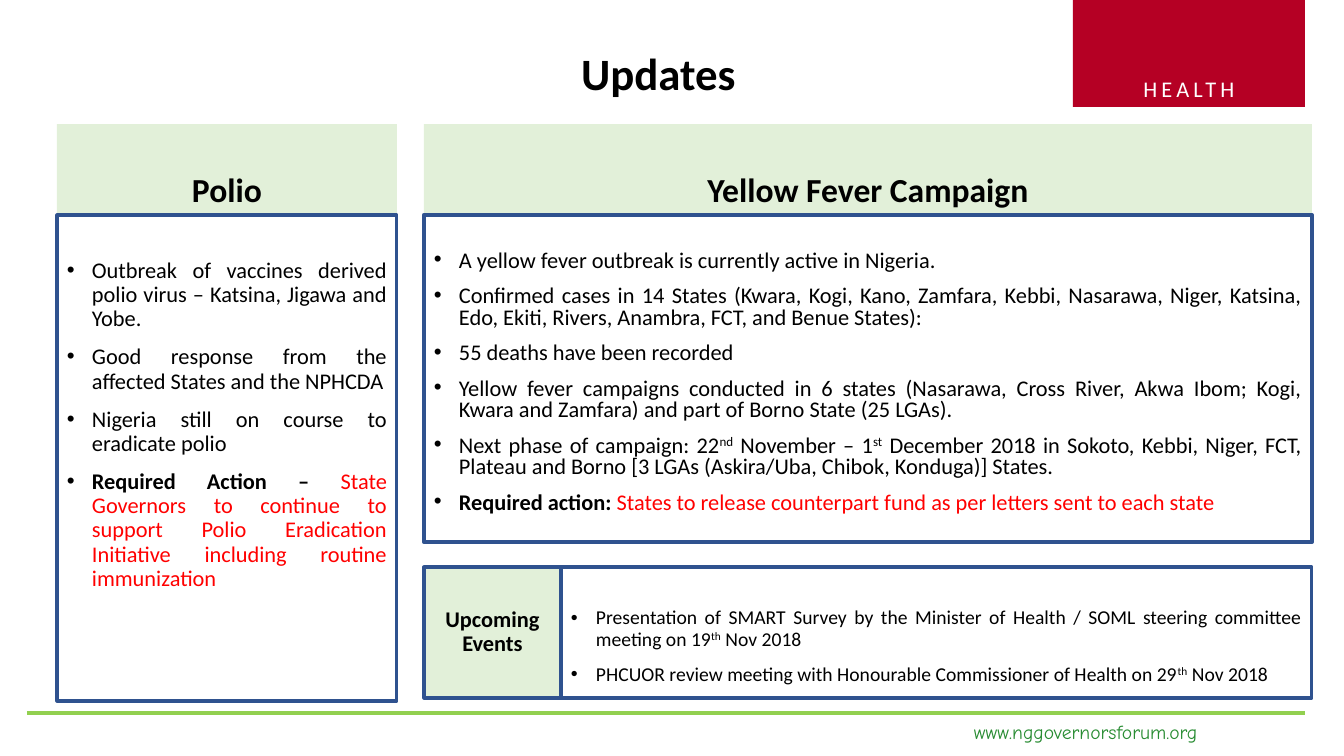
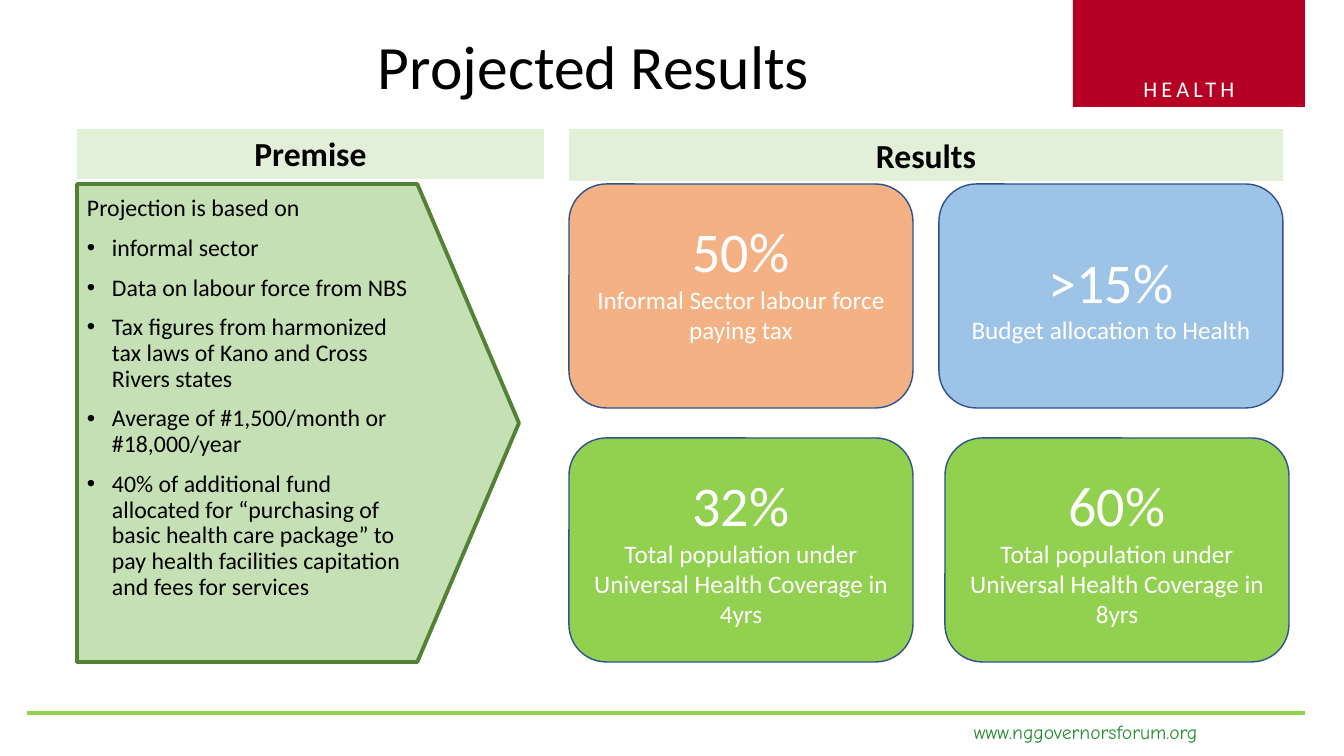
from dataclasses import dataclass
from typing import Optional

from lxml.etree import SubElement
from pptx import Presentation
from pptx.dml.color import RGBColor
from pptx.enum.shapes import MSO_CONNECTOR, MSO_SHAPE as Shape
from pptx.enum.text import MSO_ANCHOR as Anchor, MSO_AUTO_SIZE, PP_ALIGN as Align
from pptx.oxml.ns import qn
from pptx.util import Pt

PX = 914400 / 100.8
COMPARISON_LAYOUT = 4
FONT = "Calibri"
FOOTER_FONT = "Comic Neue"

BLACK = RGBColor(0x00, 0x00, 0x00)
WHITE = RGBColor(0xFF, 0xFF, 0xFF)
RED = RGBColor(0xFF, 0x00, 0x00)
CRIMSON = RGBColor(0xB5, 0x00, 0x24)
LIME = RGBColor(0x92, 0xD0, 0x50)
FOOTER_GREEN = RGBColor(0x28, 0x8C, 0x32)
PALE_GREEN = RGBColor(0xE2, 0xF0, 0xD9)
SOFT_GREEN = RGBColor(0xC5, 0xE0, 0xB4)
DARK_GREEN = RGBColor(0x54, 0x82, 0x35)
NAVY = RGBColor(0x2F, 0x52, 0x8F)
ORANGE = RGBColor(0xF4, 0xB1, 0x83)
SKY = RGBColor(0x9D, 0xC3, 0xE6)


@dataclass
class Piece:
    text: str
    bold: Optional[bool] = None
    color: Optional[RGBColor] = None
    raised: bool = False


def raised(text):
    return Piece(text, raised=True)


def action(label, request):
    return [Piece(label, bold=True), Piece(request, color=RED)]


POLIO = [
    "Outbreak of vaccines derived polio virus – Katsina, Jigawa and Yobe.",
    "Good response from the affected States and the NPHCDA",
    "Nigeria still on course to eradicate polio",
    action("Required Action – ", "State Governors to continue to support Polio "
           "Eradication Initiative including routine immunization"),
]
YELLOW_FEVER = [
    "A yellow fever outbreak is currently active in Nigeria.",
    "Confirmed cases in 14 States (Kwara, Kogi, Kano, Zamfara, Kebbi, Nasarawa, "
    "Niger, Katsina, Edo, Ekiti, Rivers, Anambra, FCT, and Benue States):",
    "55 deaths have been recorded",
    "Yellow fever campaigns conducted in 6 states (Nasarawa, Cross River, Akwa Ibom; "
    "Kogi, Kwara and Zamfara) and part of Borno State (25 LGAs).",
    [Piece("Next phase of campaign: 22"), raised("nd"), Piece(" November – 1"), raised("st"),
     Piece(" December 2018 in Sokoto, Kebbi, Niger, FCT, Plateau and Borno "
           "[3 LGAs (Askira/Uba, Chibok, Konduga)] States.")],
    action("Required action: ",
           "States to release counterpart fund as per letters sent to each state"),
]
EVENTS = [
    [Piece("Presentation of SMART Survey by the Minister of Health / SOML steering "
           "committee meeting on 19"), raised("th"), Piece(" Nov 2018")],
    [Piece("PHCUOR review meeting with Honourable Commissioner of Health on 29"),
     raised("th"), Piece(" Nov 2018")],
]
PREMISE = [
    "informal sector",
    "Data on labour force from NBS",
    "Tax figures from harmonized tax laws of Kano and Cross Rivers states",
    "Average of #1,500/month or #18,000/year",
    "40% of additional fund allocated for “purchasing of basic health care package” "
    "to pay health facilities capitation and fees for services",
]
COVERAGE = "Total population under Universal Health Coverage in "
RESULT_CARDS = [
    (569, 184, ORANGE, "50%", "Informal Sector labour force paying tax", 36),
    (939, 184, SKY, ">15%", "Budget allocation to Health", 5),
    (569, 438, LIME, "32%", COVERAGE + "4yrs", 5),
    (945, 438, LIME, "60%", COVERAGE + "8yrs", 5),
]


def px(length):
    return round(length * PX)


def place(shape, left, top, width, height):
    shape.left, shape.top = px(left), px(top)
    shape.width, shape.height = px(width), px(height)


def paint(shape, fill=None, line=None, weight=1):
    if fill is None:
        shape.fill.background()
    else:
        shape.fill.solid()
        shape.fill.fore_color.rgb = fill
    if line is None:
        shape.line.fill.background()
    else:
        shape.line.color.rgb = line
        shape.line.width = Pt(weight)


def draw(page, kind, bounds, fill=None, line=None, weight=1):
    shape = page.shapes.add_shape(kind, *map(px, bounds))
    shape.shadow.inherit = False
    paint(shape, fill, line, weight)
    return shape


def prepare(shape, anchor, top=5, bottom=5):
    frame = shape.text_frame
    frame.word_wrap = True
    frame.auto_size = MSO_AUTO_SIZE.NONE
    frame.vertical_anchor = anchor
    frame.margin_left = frame.margin_right = px(10)
    frame.margin_top, frame.margin_bottom = px(top), px(bottom)
    return frame


def add_para(frame, content, size, align=Align.LEFT, color=BLACK, bold=False,
             font=FONT, leading=1.0, before=0, bullet=False):
    first = not frame.paragraphs[0].runs
    para = frame.paragraphs[0] if first else frame.add_paragraph()
    para.alignment = align
    para.line_spacing = leading
    para.space_before = Pt(0 if first else before)
    props = para._p.get_or_add_pPr()
    props.set("marL", str(px(25) if bullet else 0))
    props.set("indent", str(px(-25) if bullet else 0))
    if bullet:
        SubElement(props, qn("a:buFont")).set("typeface", "Arial")
        SubElement(props, qn("a:buChar")).set("char", "•")
    else:
        SubElement(props, qn("a:buNone"))
    para.font.name, para.font.size, para.font.bold = font, Pt(size), bold
    para.font.color.rgb = color
    for piece in [Piece(content)] if isinstance(content, str) else content:
        span = para.add_run()
        span.text = piece.text
        if piece.bold is not None:
            span.font.bold = piece.bold
        if piece.color is not None:
            span.font.color.rgb = piece.color
        if piece.raised:
            span._r.get_or_add_rPr().set("baseline", "30000")
    return para


def add_bullets(frame, items, size, leading=0.9, align=Align.JUSTIFY):
    for item in items:
        add_para(frame, item, size, align, leading=leading, before=10, bullet=True)


def set_title(page, text, bounds, size, align, bold=False):
    title = page.shapes.title
    place(title, *bounds)
    add_para(prepare(title, Anchor.MIDDLE), text, size, align, bold=bold, leading=0.9)


def set_heading(page, index, text, bounds):
    heading = page.placeholders[index]
    place(heading, *bounds)
    paint(heading, PALE_GREEN)
    add_para(prepare(heading, Anchor.BOTTOM), text, 24, Align.CENTER, bold=True, leading=0.9)


def set_list(page, index, bounds, items, leading, weight, top):
    box = page.placeholders[index]
    place(box, *bounds)
    paint(box, line=NAVY, weight=weight)
    add_bullets(prepare(box, Anchor.TOP, top), items, 16, leading)


def add_card(page, left, top, fill, figure, label, bottom):
    card = draw(page, Shape.ROUNDED_RECTANGLE, (left, top, 344, 224), fill, NAVY)
    frame = prepare(card, Anchor.MIDDLE, bottom=bottom)
    add_para(frame, figure, 40, Align.CENTER, WHITE)
    add_para(frame, label, 18, Align.CENTER, WHITE)


def furnish_master(deck, page):
    band = draw(page, Shape.RECTANGLE, (1073, -1, 232, 108), CRIMSON)
    para = add_para(prepare(band, Anchor.BOTTOM), "HEALTH", 16, Align.CENTER, WHITE)
    para.runs[0]._r.get_or_add_rPr().set("spc", "300")

    rule = page.shapes.add_connector(MSO_CONNECTOR.STRAIGHT, *map(px, (27, 713, 1305, 713)))
    rule.line.color.rgb = LIME
    rule.line.width = Pt(2.25)
    SubElement(rule.element.spPr, qn("a:effectLst"))

    footer = page.shapes.add_textbox(*map(px, (964, 715, 288, 34)))
    add_para(prepare(footer, Anchor.TOP), "www.nggovernorsforum.org", 14,
             color=FOOTER_GREEN, font=FOOTER_FONT)

    for shape in (band, rule, footer):
        deck.slide_master.shapes.element.append(shape.element)


def build_updates(page):
    set_title(page, "Updates", (352, 40, 613, 73), 32, Align.CENTER, bold=True)
    set_heading(page, 1, "Polio", (57, 124, 340, 91))
    set_list(page, 2, (57, 215, 340, 486), POLIO, 0.9, 2.25, 44)
    set_heading(page, 3, "Yellow Fever Campaign", (424, 124, 888, 91))
    set_list(page, 4, (424, 215, 888, 327), YELLOW_FEVER, 0.8, 3, 36)

    events = draw(page, Shape.RECTANGLE, (561, 567, 751, 131), None, NAVY, 2.25)
    add_bullets(prepare(events, Anchor.TOP, 41), EVENTS, 14)
    label = draw(page, Shape.RECTANGLE, (424, 567, 137, 131), PALE_GREEN, NAVY, 2.25)
    add_para(prepare(label, Anchor.MIDDLE), "Upcoming Events", 16, Align.CENTER,
             bold=True, leading=0.9)


def build_results(page):
    set_title(page, "Projected Results", (368, 23, 586, 94), 44, Align.LEFT)
    set_heading(page, 1, "Premise", (77, 129, 467, 50))
    set_heading(page, 3, "Results", (569, 129, 714, 52))

    arrow = draw(page, Shape.PENTAGON, (77, 184, 442, 478), SOFT_GREEN, DARK_GREEN, 2.75)
    arrow.adjustments[0] = 0.23
    page.shapes.title.element.addprevious(arrow.element)

    premise = page.placeholders[2]
    place(premise, 77, 191, 351, 468)
    frame = prepare(premise, Anchor.TOP)
    add_para(frame, "Projection is based on", 17, leading=0.9)
    add_bullets(frame, PREMISE, 17, align=Align.LEFT)

    for card in RESULT_CARDS:
        add_card(page, *card)
    unused = page.placeholders[4].element
    unused.getparent().remove(unused)


def main():
    deck = Presentation()
    deck.slide_width, deck.slide_height = px(1344), px(756)
    layout = deck.slide_layouts[COMPARISON_LAYOUT]
    updates, results = (deck.slides.add_slide(layout) for _ in range(2))
    furnish_master(deck, updates)
    build_updates(updates)
    build_results(results)
    deck.save("out.pptx")


if __name__ == "__main__":
    main()
